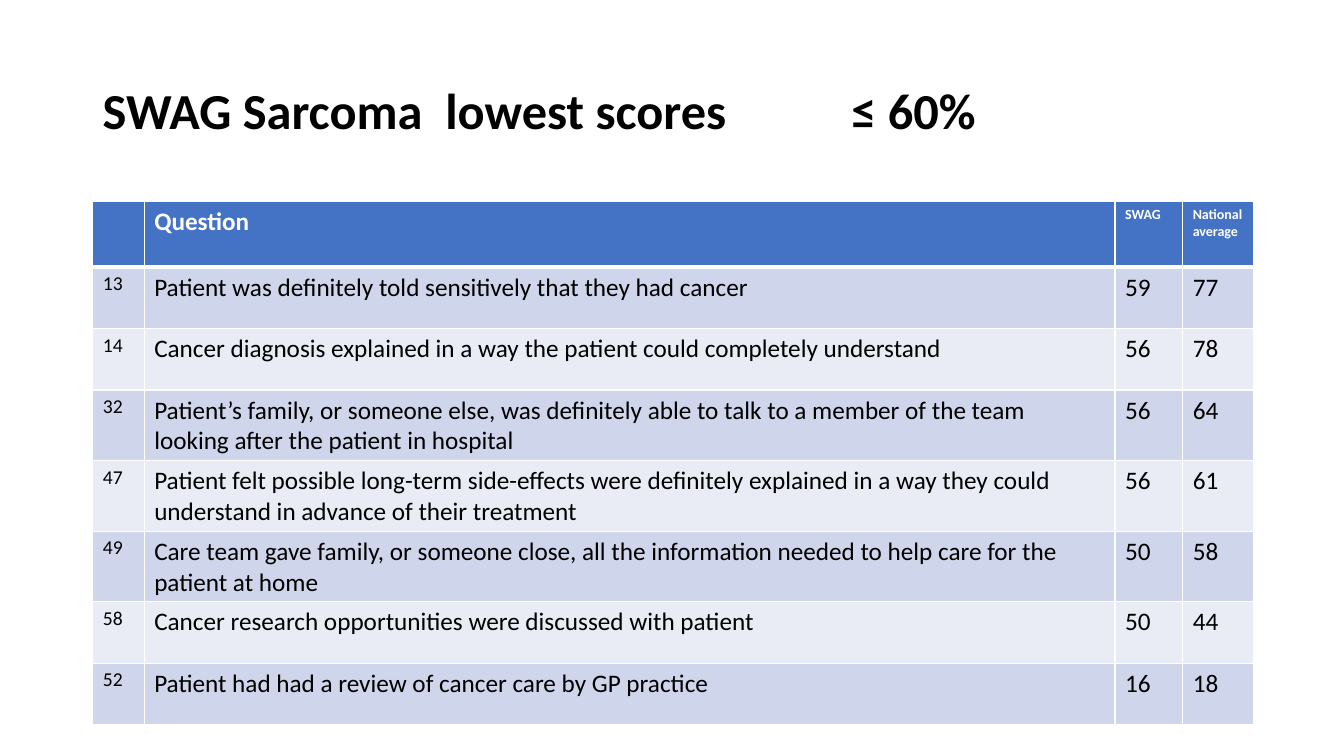
from dataclasses import dataclass

from lxml import etree
from pptx import Presentation
from pptx.dml.color import RGBColor
from pptx.enum.text import MSO_ANCHOR
from pptx.oxml.ns import qn
from pptx.util import Emu, Inches, Pt

MIDDLE = MSO_ANCHOR.MIDDLE
FONT = "Calibri"
COLOURS = {
    "header": "4472C4",
    "odd": "CFD5EA",
    "even": "E9EBF5",
    "white": "FFFFFF",
    "black": "000000",
}

# The page is a grid of 100 columns by 100 rows
PAGE_WIDTH, PAGE_HEIGHT = Inches(13.33), Inches(7.5)
LEFT, WIDTH = 6.9, 86.35
TITLE_TOP, TITLE_HEIGHT = 5.33, 19.33
TABLE_TOP, HEADER_HEIGHT, BODY_HEIGHT = 26.67, 8.67, 8.13
COLUMN_WIDTHS = (3.83, 72.24, 5.03, 5.25)
THRESHOLD_TAB = 55.7

HEADINGS = ("", "Question", "SWAG", "National average")
HEADING_SIZES = (18, 18, 10, 10)
BODY_SIZES = (14, 18, 18, 18)
THIN, THICK = 1, 3


@dataclass(frozen=True)
class Score:
    number: int
    question: str
    swag: int
    national: int

    def texts(self) -> tuple[str, ...]:
        return str(self.number), self.question, str(self.swag), str(self.national)


SCORES = (
    Score(13, "Patient was definitely told sensitively that they had cancer", 59, 77),
    Score(14, "Cancer diagnosis explained in a way the patient could completely understand", 56, 78),
    Score(32, "Patient’s family, or someone else, was definitely able to talk to a member "
              "of the team looking after the patient in hospital", 56, 64),
    Score(47, "Patient felt possible long-term side-effects were definitely explained in a way "
              "they could understand in advance of their treatment", 56, 61),
    Score(49, "Care team gave family, or someone close, all the information needed to help "
              "care for the patient at home", 50, 58),
    Score(58, "Cancer research opportunities were discussed with patient", 50, 44),
    Score(52, "Patient had had a review of cancer care by GP practice", 16, 18),
)


def across(columns: float) -> Emu:
    return Emu(round(PAGE_WIDTH * columns / 100))


def down(rows: float) -> Emu:
    return Emu(round(PAGE_HEIGHT * rows / 100))


def format_runs(para, size: float, colour: str, bold: bool) -> None:
    for span in para.runs:
        span.font.name = FONT
        span.font.size = Pt(size)
        span.font.bold = bold
        span.font.color.rgb = RGBColor.from_string(COLOURS[colour])


def add_borders(cell, top: float, bottom: float) -> None:
    """Border lines come before the fill in the cell properties."""
    properties = cell._tc.get_or_add_tcPr()
    sides = (("a:lnL", THIN), ("a:lnR", THIN), ("a:lnT", top), ("a:lnB", bottom))
    for position, (side, points) in enumerate(sides):
        line = etree.Element(qn(side), w=str(Pt(points)))
        fill = etree.SubElement(line, qn("a:solidFill"))
        etree.SubElement(fill, qn("a:srgbClr"), val=COLOURS["white"])
        properties.insert(position, line)


def add_title(page) -> None:
    box = page.shapes.add_textbox(across(LEFT), down(TITLE_TOP), across(WIDTH), down(TITLE_HEIGHT))
    frame = box.text_frame
    frame.word_wrap = True
    frame.vertical_anchor = MIDDLE
    frame.text = "SWAG Sarcoma  lowest scores\t≤ 60%"
    para = frame.paragraphs[0]
    para.line_spacing = 0.9
    format_runs(para, 36, "black", True)
    tabs = etree.SubElement(para._p.get_or_add_pPr(), qn("a:tabLst"))
    etree.SubElement(tabs, qn("a:tab"), pos=str(across(THRESHOLD_TAB)), algn="l")


def add_score_table(page) -> None:
    rows = [HEADINGS] + [score.texts() for score in SCORES]
    table_height = HEADER_HEIGHT + BODY_HEIGHT * len(SCORES)
    table = page.shapes.add_table(
        len(rows), len(HEADINGS),
        across(LEFT), down(TABLE_TOP), across(WIDTH), down(table_height),
    ).table
    for column, width in zip(table.columns, COLUMN_WIDTHS):
        column.width = across(width)

    for index, texts in enumerate(rows):
        is_header = index == 0
        table.rows[index].height = down(HEADER_HEIGHT if is_header else BODY_HEIGHT)
        fill = "header" if is_header else ("odd" if index % 2 else "even")
        sizes = HEADING_SIZES if is_header else BODY_SIZES
        for cell, text, size in zip(table.rows[index].cells, texts, sizes):
            cell.text_frame.text = text
            format_runs(cell.text_frame.paragraphs[0], size,
                        "white" if is_header else "black", is_header)
            cell.fill.solid()
            cell.fill.fore_color.rgb = RGBColor.from_string(COLOURS[fill])
            add_borders(cell, THICK if index == 1 else THIN, THICK if is_header else THIN)


def main() -> None:
    deck = Presentation()
    deck.slide_width, deck.slide_height = PAGE_WIDTH, PAGE_HEIGHT
    page = deck.slides.add_slide(deck.slide_layouts[6])
    add_title(page)
    add_score_table(page)
    deck.save("out.pptx")


if __name__ == "__main__":
    main()
